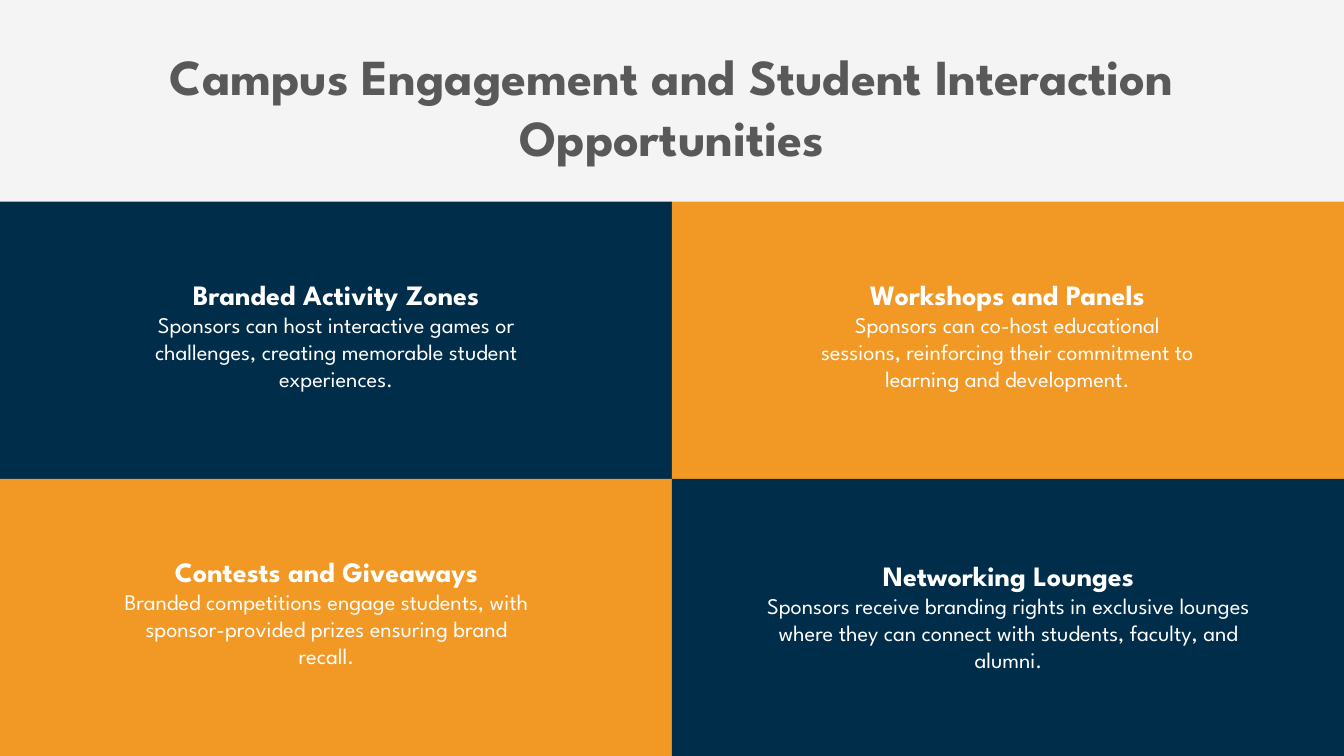
from pptx import Presentation
from pptx.dml.color import RGBColor
from pptx.enum.shapes import MSO_SHAPE as SHAPE
from pptx.enum.text import MSO_AUTO_SIZE as AUTO, PP_ALIGN as ALIGN
from pptx.util import Pt

FONT = "League Spartan"
NAVY, ORANGE, WHITE, GREY, PAPER = "002D4A", "F29824", "FFFFFF", "595959", "F4F4F4"
PANEL_W, PANEL_H, HEADER_H = 480, 198, 144

# Each panel: heading, body, then caption left, top and width within the panel
PANELS = [
    ("Branded Activity Zones",
     "Sponsors can host interactive games or challenges, creating memorable student experiences.",
     81.4, 51, 317.5),
    ("Workshops and Panels",
     "Sponsors can co-host educational sessions, reinforcing their commitment to learning and development.",
     96.7, 51, 285.8),
    ("Contests and Giveaways",
     "Branded competitions engage students, with sponsor-provided prizes ensuring brand recall.",
     77, 50.4, 312.5),
    ("Networking Lounges",
     "Sponsors receive branding rights in exclusive lounges where they can connect with students, faculty, and alumni.",
     55.7, 53.3, 369.4),
]


def paint(fill, color):
    fill.solid()
    fill.fore_color.rgb = RGBColor.from_string(color)


def add_text(s, x, y, w, h, lines, color):
    tf = s.shapes.add_textbox(Pt(x), Pt(y), Pt(w), Pt(h)).text_frame
    tf.word_wrap = True
    tf.auto_size = AUTO.SHAPE_TO_FIT_TEXT
    tf.text = "\n".join(text for text, size, bold in lines)
    for p, (text, size, bold) in zip(tf.paragraphs, lines):
        p.alignment = ALIGN.CENTER
        font = p.runs[0].font
        font.name, font.size, font.bold = FONT, Pt(size), bold
        font.color.rgb = RGBColor.from_string(color)


def add_header(s, x, y, w, h):
    title = "Campus Engagement and Student Interaction Opportunities"
    add_text(s, x + 98, y + 28.8, w - 196, h - 49.7, [(title, 36, True)], GREY)


def add_panel(s, x, y, w, h, color, heading, body, dx, dy, text_w):
    sp = s.shapes.add_shape(SHAPE.RECTANGLE, Pt(x), Pt(y), Pt(w), Pt(h))
    sp.shadow.inherit = False
    paint(sp.fill, color)
    sp.line.fill.background()
    add_text(s, x + dx, y + dy, text_w, 90,
             [(heading, 20, True), (body, 16, False)], WHITE)


def main():
    prs = Presentation()
    prs.slide_width, prs.slide_height = Pt(2 * PANEL_W), Pt(HEADER_H + 2 * PANEL_H)
    s = prs.slides.add_slide(prs.slide_layouts[6])
    paint(s.background.fill, PAPER)
    add_header(s, 0, 0, 2 * PANEL_W, HEADER_H)
    for i, panel in enumerate(PANELS):
        row, col = divmod(i, 2)
        color = NAVY if row == col else ORANGE
        add_panel(s, col * PANEL_W, HEADER_H + row * PANEL_H, PANEL_W, PANEL_H, color, *panel)
    prs.save("out.pptx")


if __name__ == "__main__":
    main()
